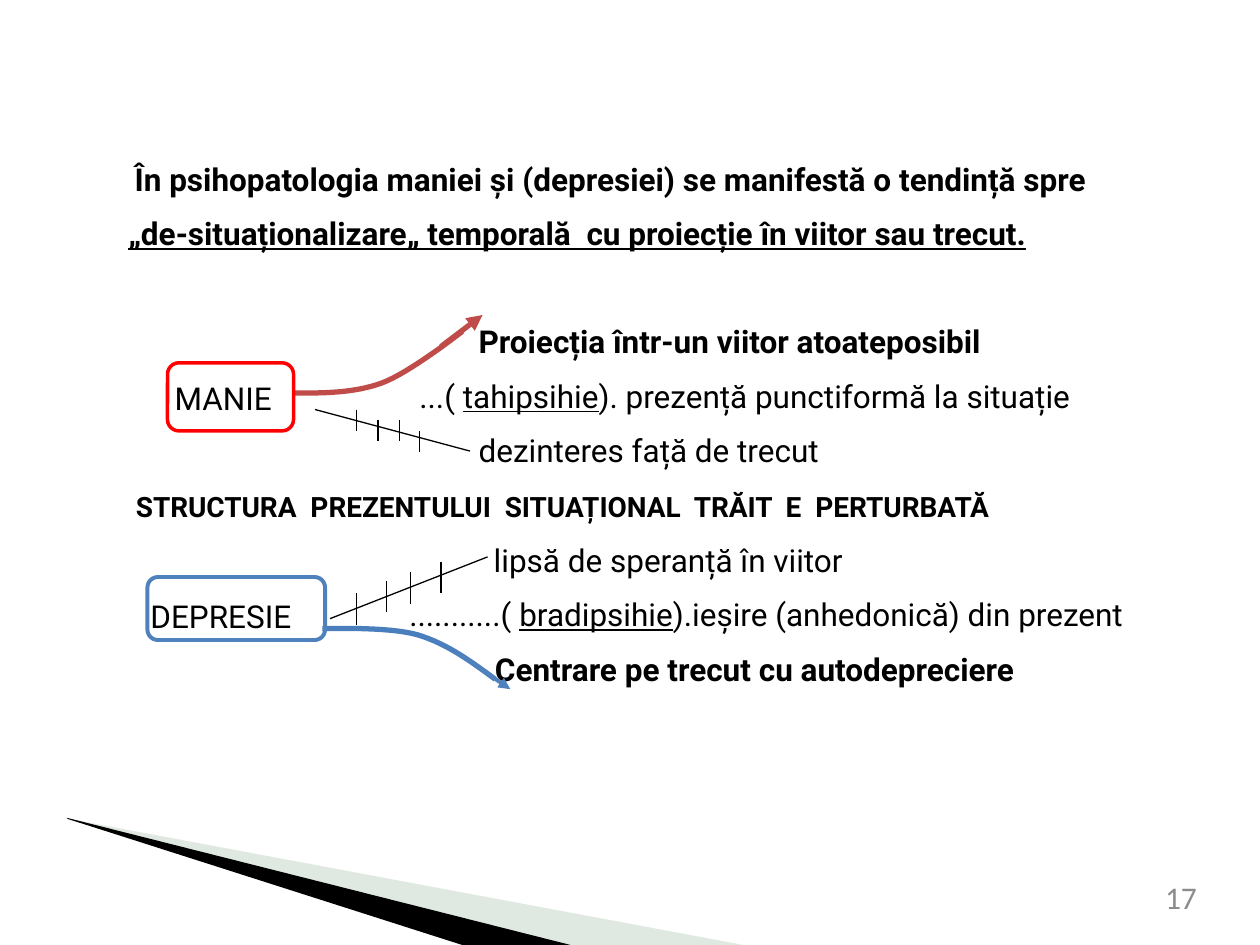
from lxml import etree
from pptx import Presentation
from pptx.dml.color import RGBColor
from pptx.enum.shapes import MSO_CONNECTOR as CONN, MSO_SHAPE as SHAPE
from pptx.enum.text import MSO_ANCHOR as ANCHOR, PP_ALIGN as ALIGN
from pptx.oxml.ns import qn
from pptx.util import Inches, Pt

RED, BLUE = "BF4C48", "4F81BD"
LINE_STEP = 30.6  # one 18 pt line with its spacing, in points


def rgb(value):
    return RGBColor.from_string(value)


def add_run(p, text, size=18, bold=False, underline=False, font="Roboto", color="000000"):
    r = p.add_run()
    r.text = text
    f = r.font
    f.name, f.size, f.bold, f.underline = font, Pt(size), bold, underline
    f.color.rgb = rgb(color)


def add_line(slide, x1, y1, x2, y2, color="000000", width=0.75, arrow=False):
    ends = [Inches(v) for v in (x1, y1, x2, y2)]
    line = slide.shapes.add_connector(CONN.STRAIGHT, *ends)
    line.line.color.rgb = rgb(color)
    line.line.width = Pt(width)
    if arrow:
        ln = line.line._get_or_add_ln()
        etree.SubElement(ln, qn("a:tailEnd"), type="triangle")
    etree.SubElement(line._element.spPr, qn("a:effectLst"))


def add_outline(slide, points, closed):
    pts = [(Inches(x), Inches(y)) for x, y in points]
    builder = slide.shapes.build_freeform(*pts[0])
    builder.add_line_segments(pts[1:], close=closed)
    sp = builder.convert_to_shape()
    sp.shadow.inherit = False
    return sp


def add_wedge(slide, points, color, opacity=100):
    sp = add_outline(slide, points, closed=True)
    sp.fill.solid()
    sp.fill.fore_color.rgb = rgb(color)
    sp.line.fill.background()
    clr = sp._element.spPr.find(".//" + qn("a:srgbClr"))
    etree.SubElement(clr, qn("a:alpha"), val=str(opacity * 1000))


def bezier(a, b, c, d, steps=16):
    for i in range(1, steps + 1):
        t = i / steps
        u = 1 - t
        yield tuple(u**3 * a[k] + 3 * u * u * t * b[k] + 3 * u * t * t * c[k] + t**3 * d[k]
                    for k in (0, 1))


def add_curve(slide, knots, color):
    points = [knots[0]]
    for i in range(0, len(knots) - 1, 3):
        points += bezier(*knots[i:i + 4])
    sp = add_outline(slide, points, closed=False)
    sp.fill.background()
    sp.line.color.rgb = rgb(color)
    sp.line.width = Pt(3)


def set_margins(tf, left=0, top=0):
    tf.margin_left, tf.margin_top = Inches(left), Inches(top)
    tf.margin_right = tf.margin_bottom = 0


def add_condition(slide, text, x, y, w, h, color, width, left, top):
    sp = slide.shapes.add_shape(SHAPE.ROUNDED_RECTANGLE, *[Inches(v) for v in (x, y, w, h)])
    sp.shadow.inherit = False
    sp.fill.background()
    sp.line.color.rgb = rgb(color)
    sp.line.width = Pt(width)
    tf = sp.text_frame
    set_margins(tf, left, top)
    tf.word_wrap = False
    tf.vertical_anchor = ANCHOR.MIDDLE
    p = tf.paragraphs[0]
    p.alignment = ALIGN.LEFT
    add_run(p, text)


def add_body(slide, rows):
    tf = slide.shapes.add_textbox(Inches(0.92), Inches(1.2), Inches(8.42), Inches(4.77)).text_frame
    tf.word_wrap = True
    for i, (left, after, runs) in enumerate(rows):
        p = tf.paragraphs[0] if i == 0 else tf.add_paragraph()
        p_pr = p._p.get_or_add_pPr()
        p_pr.set("marL", str(Inches(left)))
        p_pr.set("indent", "0")
        p.alignment = ALIGN.JUSTIFY
        p.line_spacing = 1.07
        p.space_after = Pt(after)
        for text, style in runs:
            add_run(p, text, **style)


def add_page_number(slide, text):
    tf = slide.shapes.add_textbox(Inches(7.2), Inches(6.97), Inches(2.3), Inches(0.38)).text_frame
    set_margins(tf)
    tf.word_wrap = True
    p = tf.paragraphs[0]
    p.alignment = ALIGN.RIGHT
    add_run(p, text, font="Calibri", color="8C8C8C")


def main():
    prs = Presentation()
    prs.slide_width, prs.slide_height = Inches(10), Inches(7.5)
    slide = prs.slides.add_slide(prs.slide_layouts[6])

    # Corner decoration and page number
    add_wedge(slide, [(0.55, 6.5), (5.9, 7.5), (4.52, 7.5), (0.55, 6.51)], "B3CAB5", 40)
    add_wedge(slide, [(0.53, 6.49), (0.54, 6.5), (3.67, 7.5), (4.53, 7.5)], "000000")
    add_page_number(slide, "17")

    # Body: left indent, space after, runs
    plain, bold, under = {}, {"bold": True}, {"underline": True}
    add_body(slide, [
        (0.05, 8, [("În psihopatologia maniei și (depresiei) se manifestă o tendință spre", bold)]),
        (0, 8 + LINE_STEP,
         [("„de-situaționalizare„ temporală  cu proiecție în viitor sau trecut.", {**bold, **under})]),
        (2.78, 8, [("Proiecția într-un viitor atoateposibil", bold)]),
        (2.31, 8, [("...( ", plain), ("tahipsihie", under),
                   ("). prezență punctiformă la situație", plain)]),
        (2.78, 10.4, [("dezinteres față de trecut", plain)]),
        (0.06, 8.6, [("STRUCTURA  PREZENTULUI  SITUAȚIONAL  TRĂIT  E  PERTURBATĂ",
                      {"size": 16, **bold})]),
        (2.9, 8, [("lipsă de speranță în viitor", plain)]),
        (2.23, 8, [("...........( ", plain), ("bradipsihie", under),
                   (").ieșire (anhedonică) din prezent", plain)]),
        (2.91, 8, [("Centrare pe trecut cu autodepreciere", bold)]),
    ])

    # Barred links: mania to the past, depression to the future
    add_line(slide, 2.5, 3.25, 3.73, 3.58)
    for x, y in [(2.83, 3.25), (3, 3.33), (3.17, 3.33), (3.33, 3.42)]:
        add_line(slide, x, y, x, y + 0.17)
    add_line(slide, 2.62, 4.91, 3.87, 4.42)
    for x, y in [(2.83, 4.71), (3.07, 4.61), (3.26, 4.54), (3.5, 4.46)]:
        add_line(slide, x, y, x, y + 0.25)

    # Curved arrows: mania to the future, depression to the past
    add_curve(slide, [(2.33, 3.12), (2.57, 3.12), (2.81, 3.12), (3.03, 3.04),
                      (3.25, 2.96), (3.67, 2.63), (3.67, 2.63)], RED)
    add_line(slide, 3.5, 2.75, 3.83, 2.5, RED, 3, arrow=True)
    add_curve(slide, [(3.93, 5.39), (3.74, 5.25), (3.55, 5.11), (3.32, 5.04),
                      (3.09, 4.97), (2.56, 4.99), (2.56, 4.99)], "4B7EBC")
    add_line(slide, 3.61, 5.17, 4.05, 5.47, BLUE, 2.25, arrow=True)

    # The two framed conditions
    add_condition(slide, "DEPRESIE", 1.17, 4.58, 1.41, 0.5, BLUE, 2.25, left=0, top=0.12)
    add_condition(slide, "MANIE", 1.33, 2.88, 1, 0.54, "FF0000", 2, left=0.03, top=0.02)

    prs.save("out.pptx")


if __name__ == "__main__":
    main()
